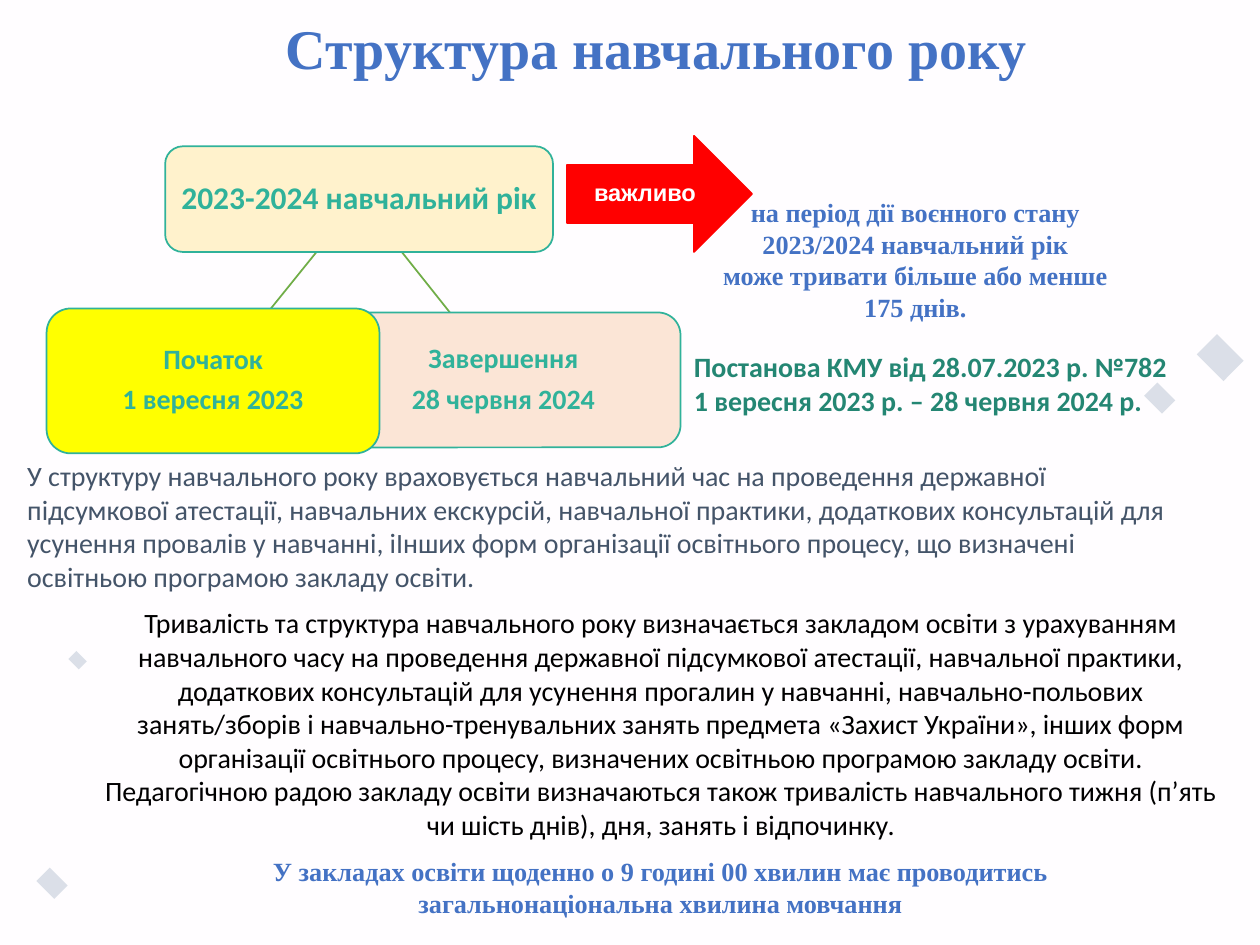
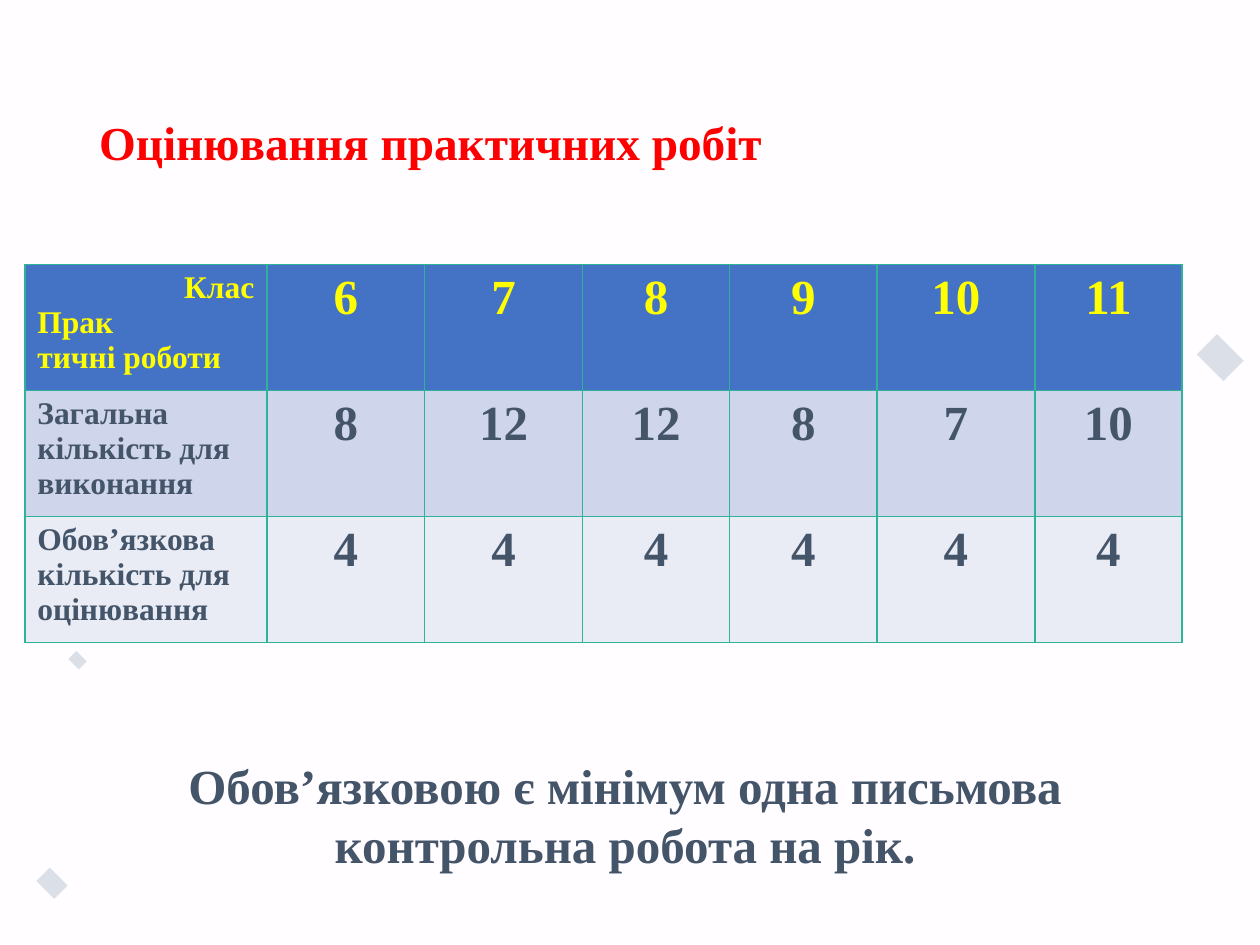
from dataclasses import dataclass
from lxml.etree import SubElement
from pptx import Presentation
from pptx.dml.color import RGBColor
from pptx.enum.shapes import MSO_CONNECTOR, MSO_SHAPE
from pptx.enum.text import MSO_ANCHOR, PP_ALIGN
from pptx.oxml.ns import qn
from pptx.util import Cm, Pt


@dataclass(frozen=True)
class Theme:
    background: str = "FFFDFF"
    ornament: str = "8497B0"
    blue: str = "4472C4"
    teal: str = "30B29A"
    dark_teal: str = "248673"
    slate: str = "445469"
    green: str = "70AD47"
    red: str = "FF0000"
    yellow: str = "FFFF00"
    cream: str = "FFF2CC"
    peach: str = "FBE5D6"
    row_dark: str = "CFD5EA"
    row_light: str = "E9EBF5"
    black: str = "000000"
    white: str = "FFFFFF"
    serif: str = "Times New Roman"
    sans: str = "Calibri"
    label: str = "Arial"
    title: float = 32
    subtitle: float = 27
    figure: float = 28
    heading: float = 18
    body: float = 16
    remark: float = 15
    tag: float = 13.5


theme = Theme()


def write(frame, lines, size, colour, font, bold=True, align=PP_ALIGN.LEFT, spacing=1.0, after=0):
    frame.word_wrap = True
    for index, line in enumerate(lines):
        para = frame.add_paragraph() if index else frame.paragraphs[0]
        para.alignment = align
        para.line_spacing = spacing
        para.space_after = Pt(after)
        span = para.add_run()
        span.text = line
        span.font.size = Pt(size)
        span.font.name = font
        span.font.bold = bold
        span.font.color.rgb = RGBColor.from_string(colour)


def add_text(page, place, lines, size, colour, font, bold=True, align=PP_ALIGN.LEFT):
    box = page.shapes.add_textbox(*map(Cm, place))
    write(box.text_frame, lines, size, colour, font, bold, align)
    return box.text_frame


deck = Presentation()
deck.slide_width, deck.slide_height = Cm(25.4), Cm(19.05)
backdrop = deck.slide_master.background.fill
backdrop.solid()
backdrop.fore_color.rgb = RGBColor.from_string(theme.background)

ornaments = [
    (MSO_SHAPE.BLOCK_ARC, (19, -3.96, 11.61, 8.71), 225, (73.05, 114.91, 0.14)),
    (MSO_SHAPE.RECTANGLE, (24.31, 6.83, 0.58, 0.76), 315, ()),
    (MSO_SHAPE.BLOCK_ARC, (-7.14, 12.24, 8.71, 11.61), 42.5, (93.74, 107.95, 0.08)),
    (MSO_SHAPE.RECTANGLE, (23.19, 7.77, 0.38, 0.51), 315, ()),
    (MSO_SHAPE.RECTANGLE, (0.86, 17.55, 0.38, 0.51), 315, ()),
    (MSO_SHAPE.RECTANGLE, (1.45, 13.16, 0.23, 0.3), 315, ()),
]
pages = [deck.slides.add_slide(deck.slide_layouts[6]) for _ in range(2)]
for page in pages:
    for kind, place, rotation, adjustments in ornaments:
        ornament = page.shapes.add_shape(kind, *map(Cm, place))
        ornament.shadow.inherit = False
        ornament.rotation = rotation
        for index, value in enumerate(adjustments):
            ornament.adjustments[index] = value
        ornament.fill.solid()
        ornament.fill.fore_color.rgb = RGBColor.from_string(theme.ornament)
        tint = next(ornament.element.iter(qn("a:srgbClr")))
        SubElement(tint, qn("a:alpha"), val="29000")
        ornament.line.fill.background()

year_page, grading_page = pages

title = add_text(year_page, (5.51, 0.15, 15.6, 1.63), ["Структура навчального року"],
                 theme.title, theme.blue, theme.serif)
title.word_wrap = False

for ends in [(8.1, 5.08, 9.07, 6.3), (6.38, 5.08, 5.46, 6.22)]:
    branch = year_page.shapes.add_connector(MSO_CONNECTOR.STRAIGHT, *map(Cm, ends))
    branch.line.color.rgb = RGBColor.from_string(theme.green)
    branch.line.width = Pt(1)
    SubElement(branch.element.spPr, qn("a:effectLst"))

year_shapes = [
    (MSO_SHAPE.ROUNDED_RECTANGLE, (3.33, 2.95, 7.82, 2.13), theme.cream, theme.teal,
     ["2023-2024 навчальний рік"], theme.heading, theme.teal, theme.sans),
    (MSO_SHAPE.ROUNDED_RECTANGLE, (6.58, 6.3, 7.14, 2.72), theme.peach, theme.teal,
     ["Завершення", "28 червня 2024"], theme.body, theme.teal, theme.sans),
    (MSO_SHAPE.ROUNDED_RECTANGLE, (0.94, 6.22, 6.71, 2.92), theme.yellow, theme.teal,
     ["Початок", "1 вересня 2023"], theme.body, theme.teal, theme.sans),
    (MSO_SHAPE.RIGHT_ARROW, (11.43, 2.74, 3.73, 2.34), theme.red, theme.red,
     ["важливо"], theme.tag, theme.white, theme.label),
]
for kind, place, fill, outline, lines, size, colour, font in year_shapes:
    shape = year_page.shapes.add_shape(kind, *map(Cm, place))
    shape.shadow.inherit = False
    shape.fill.solid()
    shape.fill.fore_color.rgb = RGBColor.from_string(fill)
    shape.line.color.rgb = RGBColor.from_string(outline)
    shape.line.width = Pt(1)
    frame = shape.text_frame
    frame.margin_left = frame.margin_right = Cm(0.1)
    frame.vertical_anchor = MSO_ANCHOR.MIDDLE
    write(frame, lines, size, colour, font, align=PP_ALIGN.CENTER, spacing=0.9, after=5.6)

add_text(year_page, (14.3, 3.84, 8.31, 3.45), [
    "на період дії воєнного стану 2023/2024 навчальний рік",
    "може тривати більше або менше 175 днів.",
], theme.remark, theme.blue, theme.serif, align=PP_ALIGN.CENTER)

add_text(year_page, (1.68, 12.09, 23.29, 5.05), [
    "Тривалість та структура навчального року визначається закладом освіти з урахуванням "
    "навчального часу на проведення державної підсумкової атестації, навчальної практики, "
    "додаткових консультацій для усунення прогалин у навчанні, навчально-польових "
    "занять/зборів і навчально-тренувальних занять предмета «Захист України», інших форм "
    "організації освітнього процесу, визначених освітньою програмою закладу освіти.",
    "Педагогічною радою закладу освіти визначаються також тривалість навчального тижня "
    "(п’ять чи шість днів), дня, занять і відпочинку.",
], theme.body, theme.black, theme.sans, bold=False, align=PP_ALIGN.CENTER)

add_text(year_page, (5.11, 17.12, 16.41, 1.55), [
    "У закладах освіти щоденно о 9 годині 00 хвилин має проводитись",
    "загальнонаціональна хвилина мовчання",
], theme.remark, theme.blue, theme.serif, align=PP_ALIGN.CENTER)

add_text(year_page, (13.74, 6.93, 10.21, 1.63), [
    "Постанова КМУ від 28.07.2023 р. №782",
    "1 вересня 2023 р. – 28 червня 2024 р.",
], theme.body, theme.dark_teal, theme.sans)

add_text(year_page, (0.3, 9.12, 23.95, 3), [
    "У структуру навчального року враховується навчальний час на проведення державної "
    "підсумкової атестації, навчальних екскурсій, навчальної практики, додаткових "
    "консультацій для усунення провалів у навчанні, іІнших форм організації освітнього "
    "процесу, що визначені освітньою програмою закладу освіти.",
], theme.body, theme.slate, theme.sans, bold=False)

heading = add_text(grading_page, (1.75, 1.02, 21.89, 3.68), ["Оцінювання практичних робіт"],
                   theme.subtitle, theme.red, theme.serif)
heading.vertical_anchor = MSO_ANCHOR.MIDDLE

grading_rows = [
    (["Клас", "Прак", "тичні роботи"], (6, 7, 8, 9, 10, 11), theme.blue, theme.yellow),
    (["Загальна кількість для виконання"], (8, 12, 12, 8, 7, 10), theme.row_dark, theme.slate),
    (["Обов’язкова кількість для оцінювання"], (4,) * 6, theme.row_light, theme.slate),
]
column_widths = (4.88, 3.18, 3.18, 2.97, 2.97, 3.18, 2.97)
grading = grading_page.shapes.add_table(
    len(grading_rows), len(column_widths), Cm(0.5), Cm(5.33), Cm(23.33), Cm(7.26)).table
for column, width in zip(grading.columns, column_widths):
    column.width = Cm(width)
for row, (label, counts, fill, colour) in zip(grading.rows, grading_rows):
    row.height = Cm(2.42)
    for index, cell in enumerate(row.cells):
        properties = cell._tc.get_or_add_tcPr()
        for side in ("lnL", "lnR", "lnT", "lnB"):
            border = SubElement(properties, qn(f"a:{side}"), w=str(Pt(1)))
            paint = SubElement(border, qn("a:solidFill"))
            SubElement(paint, qn("a:srgbClr"), val=theme.teal)
        cell.fill.solid()
        cell.fill.fore_color.rgb = RGBColor.from_string(fill)
        if index:
            write(cell.text_frame, [str(counts[index - 1])], theme.figure, colour,
                  theme.serif, align=PP_ALIGN.CENTER)
        else:
            write(cell.text_frame, label, theme.heading, colour, theme.serif)
grading.cell(0, 0).text_frame.paragraphs[0].alignment = PP_ALIGN.RIGHT

add_text(grading_page, (1.78, 15.11, 21.64, 2.64),
         ["Обов’язковою є мінімум одна письмова контрольна робота на рік."],
         theme.figure, theme.slate, theme.serif, align=PP_ALIGN.CENTER)

deck.save("out.pptx")
